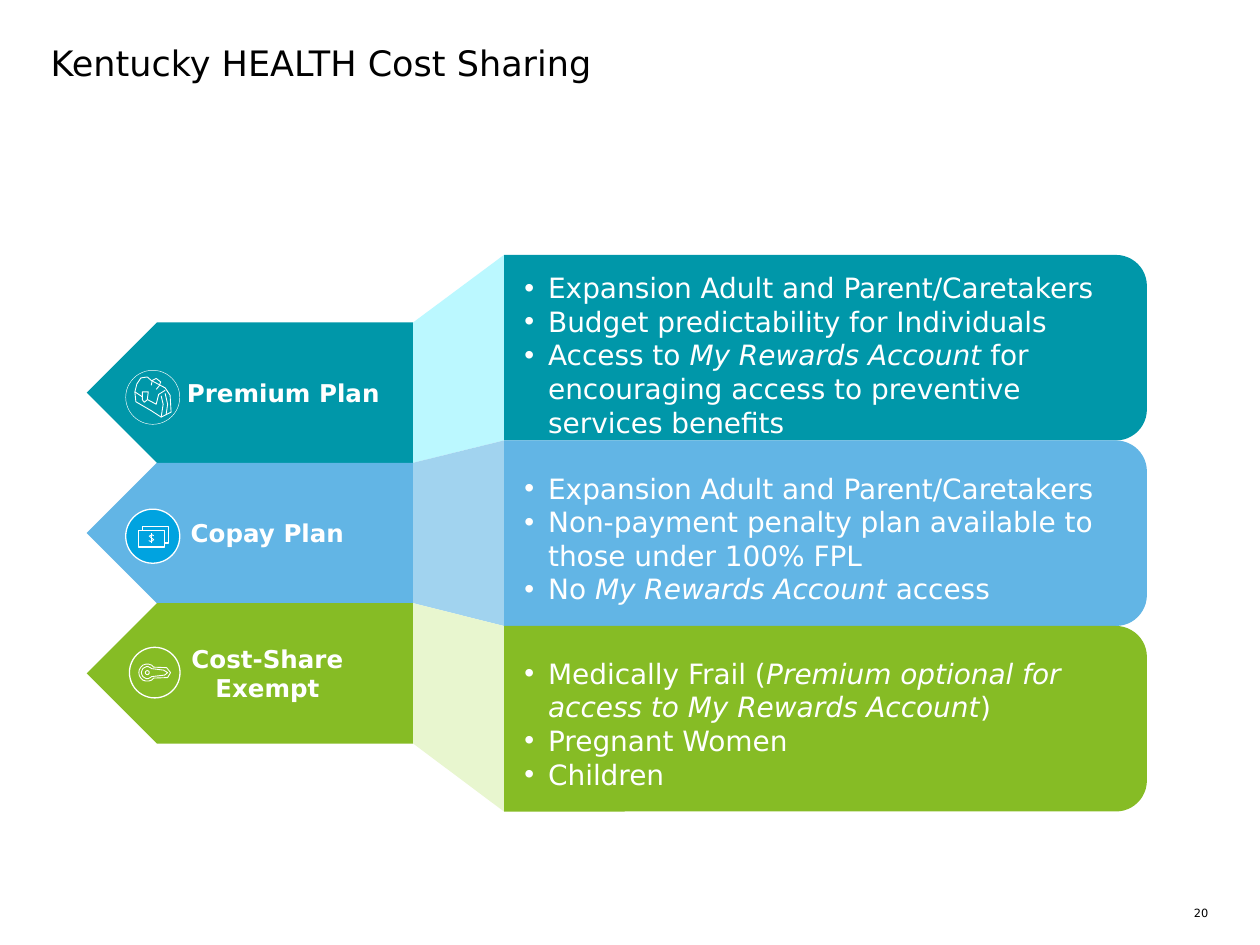
import math
import pptx
import pptx.util
import pptx.dml.color
import pptx.enum.shapes
import pptx.enum.text
from lxml import etree
from pptx.oxml.ns import qn

Cm, Pt = pptx.util.Cm, pptx.util.Pt
SHAPE = pptx.enum.shapes.MSO_SHAPE
ALIGN = pptx.enum.text.PP_ALIGN
ANCHOR = pptx.enum.text.MSO_ANCHOR
FONT = "DejaVu Sans"
COLORS = {"teal": "0097A9", "blue": "62B5E5", "green": "86BC25",
          "pale teal": "BBF8FF", "pale blue": "A1D3EF", "pale green": "E8F6CF",
          "bright blue": "00A3E0", "white": "FFFFFF", "black": "000000"}


def paint(shape, fill=None, line=None, width=0.5):
    """Set fill and line by colour name; None leaves that part empty."""
    shape.shadow.inherit = False
    if fill:
        shape.fill.solid()
        shape.fill.fore_color.rgb = pptx.dml.color.RGBColor.from_string(COLORS[fill])
    else:
        shape.fill.background()
    if line:
        shape.line.color.rgb = pptx.dml.color.RGBColor.from_string(COLORS[line])
        shape.line.width = Pt(width)
    else:
        shape.line.fill.background()


def add_span(para, text, size, color, bold=False, italic=False):
    span = para.add_run()
    span.text = text
    span.font.name, span.font.size = FONT, Pt(size)
    span.font.bold, span.font.italic = bold, italic
    span.font.color.rgb = pptx.dml.color.RGBColor.from_string(COLORS[color])


deck = pptx.Presentation()
deck.slide_width, deck.slide_height = Cm(25.4), Cm(19.05)
page = deck.slides.add_slide(deck.slide_layouts.get_by_name("Comparison"))
shapes = page.shapes
title, *bodies = page.placeholders
spare = bodies.pop().element
spare.getparent().remove(spare)

title.left, title.top, title.width, title.height = Cm(1.02), Cm(0.84), Cm(23.32), Cm(0.94)
title.text_frame.vertical_anchor = ANCHOR.TOP
title.text_frame.paragraphs[0].alignment = ALIGN.LEFT
add_span(title.text_frame.paragraphs[0], "Kentucky HEALTH Cost Sharing", 20, "black")

number = shapes.add_textbox(Cm(23.72), Cm(18.26), Cm(0.64), Cm(0.28))
number.text_frame.paragraphs[0].alignment = ALIGN.RIGHT
add_span(number.text_frame.paragraphs[0], "20", 6.5, "black")

# Each list item is a sequence of runs, alternating upright and italic.
plans = [
    {"color": "teal", "label": ["Premium Plan"], "inset": 0.89, "list": (5.46, 4.62), "items": [
        ["Expansion Adult and Parent/Caretakers"],
        ["Budget predictability for Individuals"],
        ["Access to ", "My Rewards Account ",
         "for encouraging access to preventive services benefits"]]},
    {"color": "blue", "label": ["Copay Plan"], "inset": 0.25, "list": (9.5, 2.74), "items": [
        ["Expansion Adult and Parent/Caretakers"],
        ["Non-payment penalty plan available to those under 100% FPL"],
        ["No ", "My Rewards Account ", "access"]]},
    {"color": "green", "label": ["Cost-Share", "Exempt"], "inset": 0.25, "list": (13.23, 2.74), "items": [
        ["Medically Frail (", "Premium optional for access to My Rewards Account", ")"],
        ["Pregnant Women"],
        ["Children"]]},
]
TAG_LEFT, TAG_TOP, TAG_WIDTH, TAG_HEIGHT = 1.75, 6.5, 6.58, 2.83
CARD_LEFT, CARD_TOP, CARD_WIDTH, CARD_HEIGHT = 10.16, 5.14, 12.96, 3.74
tag_right = TAG_LEFT + TAG_WIDTH

for row, (plan, body) in enumerate(zip(plans, bodies)):
    tag_top = TAG_TOP + row * TAG_HEIGHT
    card_top = CARD_TOP + row * CARD_HEIGHT

    tag = shapes.add_shape(SHAPE.PENTAGON, Cm(TAG_LEFT), Cm(tag_top), Cm(TAG_WIDTH), Cm(TAG_HEIGHT))
    tag.element.spPr.find(qn("a:xfrm")).set("flipH", "1")
    paint(tag, plan["color"])
    frame = tag.text_frame
    frame.word_wrap, frame.vertical_anchor = True, ANCHOR.MIDDLE
    frame.margin_left, frame.margin_right = Cm(plan["inset"]), Cm(0.25)
    for index, text in enumerate(plan["label"]):
        para = frame.add_paragraph() if index else frame.paragraphs[0]
        para.alignment = ALIGN.CENTER
        add_span(para, text, 14, "white", bold=True)

    builder = shapes.build_freeform(Cm(tag_right), Cm(tag_top))
    builder.add_line_segments([(Cm(CARD_LEFT), Cm(card_top)),
                               (Cm(CARD_LEFT), Cm(card_top + CARD_HEIGHT)),
                               (Cm(tag_right), Cm(tag_top + TAG_HEIGHT))])
    paint(builder.convert_to_shape(), "pale " + plan["color"])

    # The card stands upright before it is turned about its centre.
    turn = (CARD_WIDTH - CARD_HEIGHT) / 2
    card = shapes.add_shape(SHAPE.ROUND_2_SAME_RECTANGLE, Cm(CARD_LEFT + turn),
                            Cm(card_top - turn), Cm(CARD_HEIGHT), Cm(CARD_WIDTH))
    card.rotation = 90
    paint(card, plan["color"])

    body.left, body.width = Cm(10.57), Cm(12.17)
    body.top, body.height = (Cm(value) for value in plan["list"])
    frame = body.text_frame
    frame.vertical_anchor = ANCHOR.TOP
    for index, item in enumerate(plan["items"]):
        para = frame.add_paragraph() if index else frame.paragraphs[0]
        para.alignment, para.space_before = ALIGN.LEFT, Pt(0)
        properties = para._p.get_or_add_pPr()
        properties.set("marL", str(Cm(0.48)))
        properties.set("indent", str(-Cm(0.48)))
        etree.SubElement(properties, qn("a:buFont")).set("typeface", "Arial")
        etree.SubElement(properties, qn("a:buChar")).set("char", "•")
        for position, text in enumerate(item):
            add_span(para, text, 16, "white", italic=position % 2 == 1)
    body.element.getparent().append(body.element)

for box in (title, number, *bodies):
    frame = box.text_frame
    frame.word_wrap, frame.auto_size = True, pptx.enum.text.MSO_AUTO_SIZE.NONE
    frame.margin_left = frame.margin_right = frame.margin_top = frame.margin_bottom = 0

# Icon badges: centre, diameter, fill, line width
for x, y, size, fill, width in [(3.08, 8.01, 1.09, "teal", 0.25),
                                (3.08, 10.81, 1.09, "bright blue", 0.75),
                                (3.12, 13.56, 1.02, "green", 0.75)]:
    badge = shapes.add_shape(SHAPE.OVAL, Cm(x - size / 2), Cm(y - size / 2), Cm(size), Cm(size))
    paint(badge, fill, "white", width)

# Banknotes, back to front
for x, y in [(2.87, 10.62), (2.79, 10.7)]:
    note = shapes.add_shape(SHAPE.RECTANGLE, Cm(x), Cm(y), Cm(0.53), Cm(0.33))
    paint(note, "bright blue", "white", 0.75)

# Icon outlines in hundredths of a centimetre: points, closed, fill
outlines = [
    ([(272, 790), (276, 774), (284, 762), (297, 760), (305, 767), (333, 782), (343, 797),
      (345, 831), (325, 841), (305, 828), (274, 810)], True, "teal"),
    ([(272, 790), (287, 800), (315, 815), (320, 795), (333, 787)], False, None),
    ([(287, 790), (299, 790), (297, 806), (291, 811), (287, 806)], True, "teal"),
    ([(305, 777), (307, 767), (315, 763), (324, 770), (321, 778), (315, 785)], False, None),
    ([(325, 798), (329, 815), (325, 841)], False, None),
    ([(333, 793), (338, 815), (335, 836)], False, None),
    ([(310, 1080), (306, 1078), (301, 1081), (310, 1088), (305, 1092), (300, 1090)], False, None),
    ([(305, 1075), (305, 1095)], False, None),
]
# The key is drawn twice, as an outer and an inner contour.
for radius, half, end in [(17, 10, 344), (12, 5, 338)]:
    bow = [(297 + radius * math.cos(math.radians(angle)), 1356 + radius * math.sin(math.radians(angle)))
           for angle in range(40, 321, 20)]
    shaft = [(end - 8, 1356 - half), (end, 1356), (end - 6, 1356 + half)]
    outlines.append((bow + shaft, True, "green"))

for points, closed, fill in outlines:
    builder = shapes.build_freeform(*points[0], scale=Cm(0.01))
    builder.add_line_segments(points[1:], close=closed)
    paint(builder.convert_to_shape(), fill, "white")

key_hole = shapes.add_shape(SHAPE.OVAL, Cm(2.93), Cm(13.52), Cm(0.08), Cm(0.08))
paint(key_hole, "green", "white")

deck.save("out.pptx")
